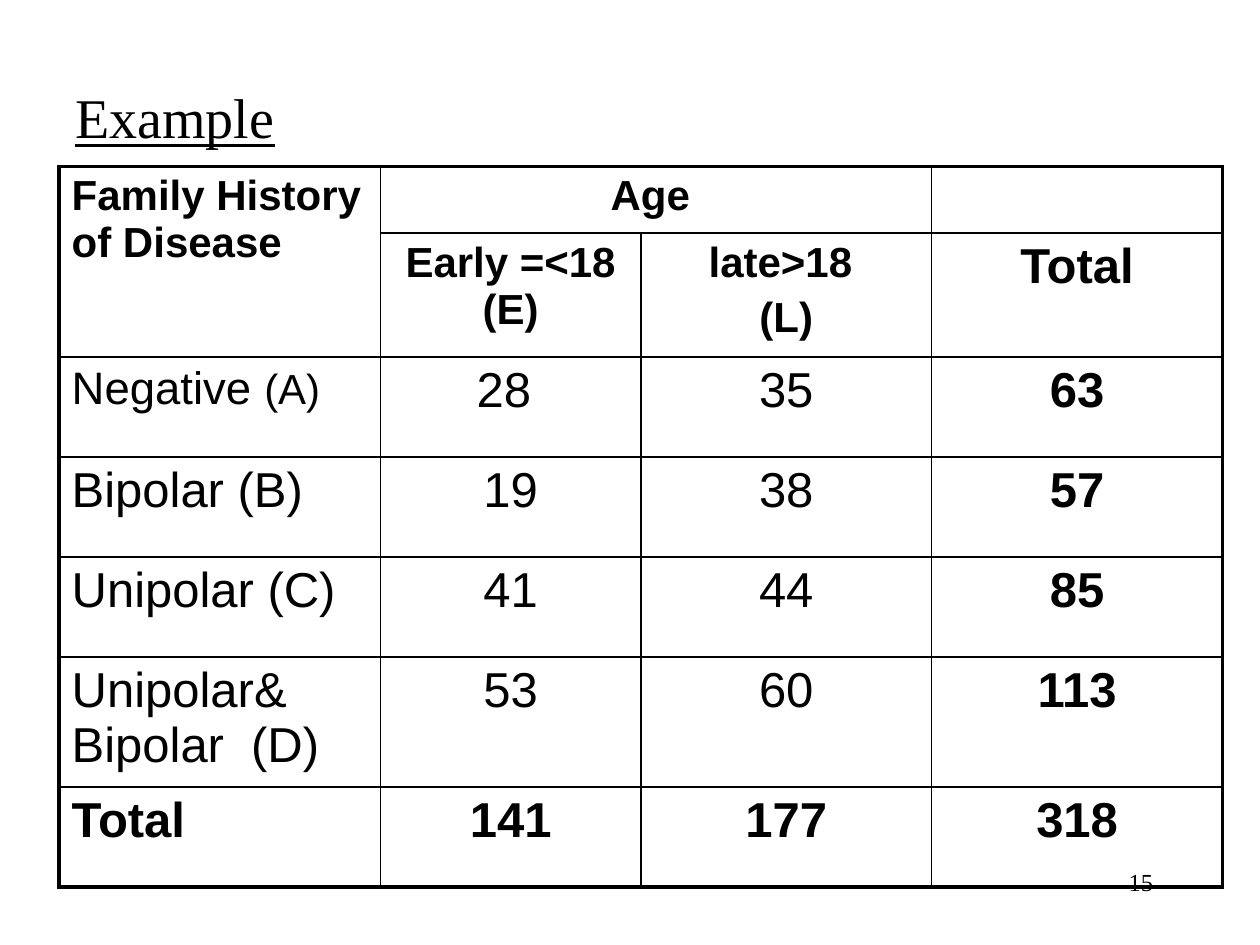
from pptx import Presentation
from pptx.dml.color import RGBColor
from pptx.enum import text
from pptx.oxml import parse_xml
from pptx.oxml.ns import nsdecls
from pptx.util import Pt

COLORS = {"ink": "000000", "paper": "FFFFFF"}
SERIF, SANS = "Times New Roman", "Arial"
LEFT, CENTER, RIGHT = text.PP_ALIGN.LEFT, text.PP_ALIGN.CENTER, text.PP_ALIGN.RIGHT

COLUMN_WIDTHS = [183.6, 148.8, 166.2, 166.2]
ROW_HEIGHTS = [38.2, 70.8, 57.1, 57.2, 57.1, 71.8, 57.2]
HEADER_ROWS = 2
HEADER_SIZE, BODY_SIZE = 24, 28
ROWS = [
    ["Family History of Disease", "Age ", "", ""],
    ["", "Early =<18 (E)", "late>18 \n(L)", "Total"],
    ["Negative (A)", "28 ", "35", "63"],
    ["Bipolar (B)", "19", "38", "57"],
    ["Unipolar (C)", "41", "44", "85"],
    ["Unipolar& Bipolar  (D)", "53", "60", "113"],
    ["Total", "141", "177", "318"],
]


def style(paragraph, face, size, align=LEFT, bold=False):
    paragraph.alignment = align
    font = paragraph.font
    font.name, font.size, font.bold = face, Pt(size), bold
    font.color.rgb = RGBColor.from_string(COLORS["ink"])


def add_label(slide, words, box, size, align=LEFT, anchor=text.MSO_ANCHOR.TOP):
    frame = slide.shapes.add_textbox(*map(Pt, box)).text_frame
    frame.word_wrap = True
    frame.vertical_anchor = anchor
    frame.text = words
    style(frame.paragraphs[0], SERIF, size, align)
    return frame.paragraphs[0]


def set_borders(cell, row, column):
    """Draw thin inner lines and a heavier outer frame."""
    outer = {
        "lnL": column == 0,
        "lnR": column == len(COLUMN_WIDTHS) - 1,
        "lnT": row == 0,
        "lnB": row == len(ROWS) - 1,
    }
    properties = cell._tc.get_or_add_tcPr()
    for position, (side, is_outer) in enumerate(outer.items()):
        width = Pt(2.25 if is_outer else 1)
        properties.insert(position, parse_xml(
            f'<a:{side} {nsdecls("a")} w="{width}"><a:solidFill>'
            f'<a:srgbClr val="{COLORS["ink"]}"/></a:solidFill></a:{side}>'))


def fill_cell(cell, row, column):
    cell.fill.solid()
    cell.fill.fore_color.rgb = RGBColor.from_string(COLORS["paper"])
    set_borders(cell, row, column)
    cell.text = ROWS[row][column]
    is_total = "Total" in (ROWS[row][0], ROWS[1][column])
    size = HEADER_SIZE if row < HEADER_ROWS and not (row and is_total) else BODY_SIZE
    for paragraph in cell.text_frame.paragraphs:
        style(paragraph, SANS, size, CENTER if column else LEFT,
              row < HEADER_ROWS or is_total)
        paragraph.space_before = Pt(size * 0.2)


def set_smaller_negative_label(cell):
    paragraph = cell.text_frame.paragraphs[0]
    paragraph.clear()
    for words, size in [("Negative ", 26), ("(A)", 24)]:
        run = paragraph.add_run()
        run.text = words
        run.font.size = Pt(size)


def add_history_table(slide):
    table = slide.shapes.add_table(
        len(ROWS), len(COLUMN_WIDTHS), Pt(33.8), Pt(95),
        Pt(sum(COLUMN_WIDTHS)), Pt(sum(ROW_HEIGHTS))).table
    table.first_row = table.horz_banding = False
    for column, width in zip(table.columns, COLUMN_WIDTHS):
        column.width = Pt(width)
    for row, height in zip(table.rows, ROW_HEIGHTS):
        row.height = Pt(height)
    for row in range(len(ROWS)):
        for column in range(len(COLUMN_WIDTHS)):
            fill_cell(table.cell(row, column), row, column)
    set_smaller_negative_label(table.cell(2, 0))
    table.cell(0, 0).merge(table.cell(1, 0))
    table.cell(0, 1).merge(table.cell(0, 2))


def main():
    deck = Presentation()
    deck.slide_width, deck.slide_height = Pt(720), Pt(540)
    slide = deck.slides.add_slide(deck.slide_layouts[6])
    title = add_label(slide, "Example", (36, 21.6, 648, 90), 32,
                      anchor=text.MSO_ANCHOR.MIDDLE)
    title.font.underline = True
    add_history_table(slide)
    add_label(slide, "15", (516, 492, 150, 36), 14, RIGHT)
    deck.save("out.pptx")


if __name__ == "__main__":
    main()
